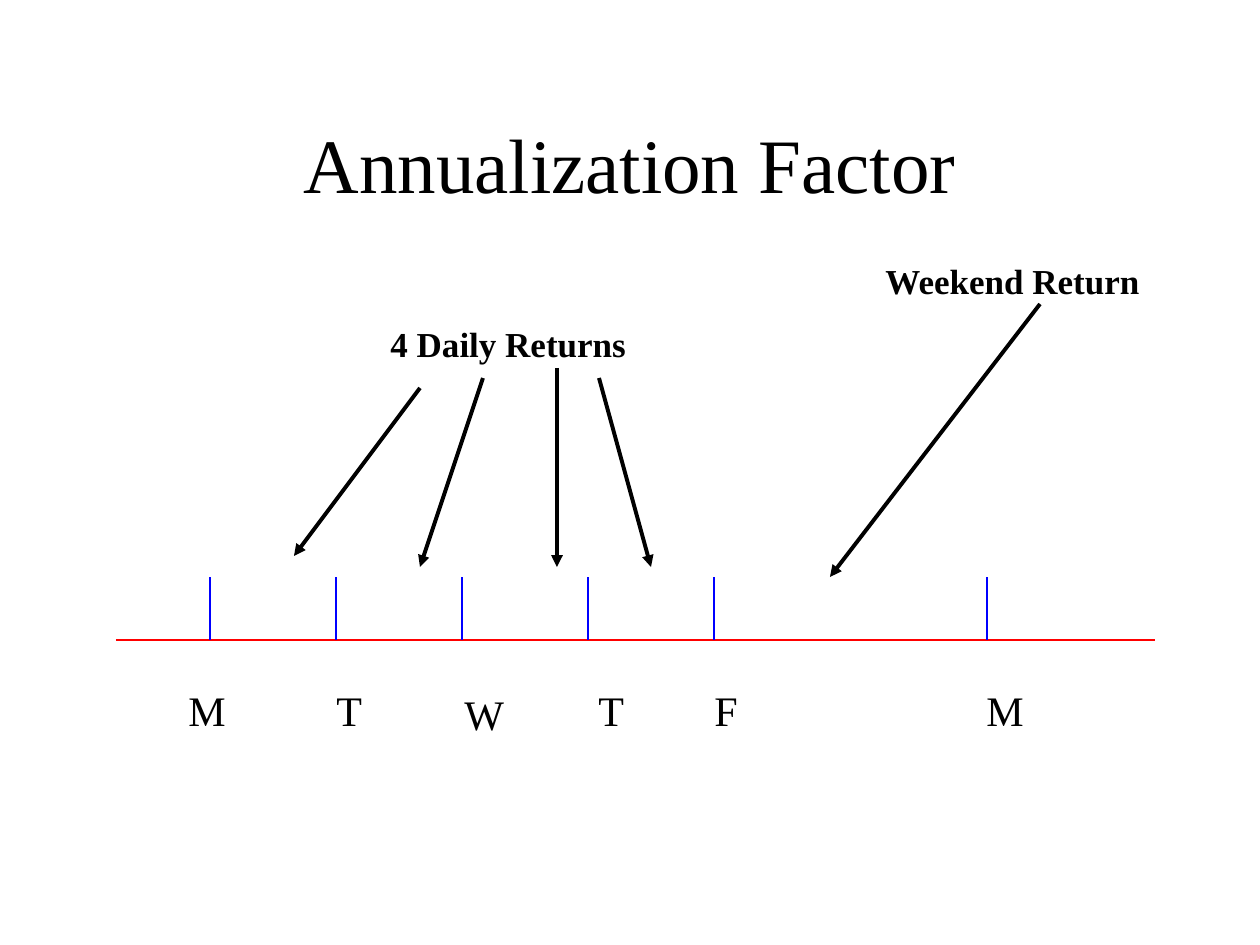
"""Build a slide that shows daily and weekend returns on a week's time line."""
import lxml.etree
import pptx
import pptx.dml.color
import pptx.enum.shapes
import pptx.enum.text
import pptx.oxml.ns
import pptx.util

PX = 914400 / 126
FONT = "Times New Roman"
HUES = {"ink": "000000", "axis": "FF0000", "tick": "0000FF"}


def emu(*sizes):
    """Turn px lengths into EMU."""
    return [pptx.util.Emu(round(size * PX)) for size in sizes]


def tint(name):
    """Give the named colour."""
    return pptx.dml.color.RGBColor.from_string(HUES[name])


def style(frame, text, size, bold=False):
    """Set the text of a frame and format its runs."""
    frame.text = text
    for run in frame.paragraphs[0].runs:
        run.font.name = FONT
        run.font.size = pptx.util.Pt(size)
        run.font.bold = bold
        run.font.color.rgb = tint("ink")


def label(slide, text, box, size, bold=False):
    """Add a text box that fits its single line."""
    frame = slide.shapes.add_textbox(*emu(*box)).text_frame
    frame.word_wrap = False
    frame.auto_size = pptx.enum.text.MSO_AUTO_SIZE.SHAPE_TO_FIT_TEXT
    style(frame, text, size, bold)


def line(slide, ends, hue, width, arrow=False):
    """Add a straight line, with an arrowhead at its end if asked."""
    kind = pptx.enum.shapes.MSO_CONNECTOR.STRAIGHT
    link = slide.shapes.add_connector(kind, *emu(*ends))
    link.line.color.rgb = tint(hue)
    link.line.width = pptx.util.Pt(width)
    props = link._element.spPr
    lxml.etree.SubElement(props, pptx.oxml.ns.qn("a:effectLst"))
    if arrow:
        stroke = props.find(pptx.oxml.ns.qn("a:ln"))
        head = lxml.etree.SubElement(stroke, pptx.oxml.ns.qn("a:tailEnd"))
        head.set("type", "triangle")


def title(slide, text, box):
    """Place and format the title."""
    shape = slide.shapes.title
    shape.left, shape.top, shape.width, shape.height = emu(*box)
    frame = shape.text_frame
    frame.auto_size = pptx.enum.text.MSO_AUTO_SIZE.NONE
    frame.vertical_anchor = pptx.enum.text.MSO_ANCHOR.MIDDLE
    style(frame, text, 44)
    frame.paragraphs[0].alignment = pptx.enum.text.PP_ALIGN.CENTER


def week(slide, days, box):
    """Draw the time line with a tick and a letter for each day."""
    left, top, width, height = box
    base = top + height
    line(slide, (left, base, left + width, base), "axis", 0.75)
    for name, tick, start, drop, wide in days:
        spot = left + tick
        line(slide, (spot, base, spot, top), "tick", 0.75)
        label(slide, name, (left + start, top + drop, wide, 63), 24)


def group(slide, text, rays, box):
    """Add a bold label with arrows that point to its returns."""
    left, top = box[:2]
    label(slide, text, box, 20, True)
    for x1, y1, x2, y2 in rays:
        ends = (left + x1, top + y1, left + x2, top + y2)
        line(slide, ends, "ink", 2.25, True)


def main():
    """Build and save the slide."""
    deck = pptx.Presentation()
    deck.slide_width, deck.slide_height = emu(1260, 945)
    slide = deck.slides.add_slide(deck.slide_layouts[5])
    title(slide, "Annualization Factor", (94, 84, 1072, 158))
    days = [
        ("M", 94, 60, 101, 62),
        ("T", 220, 208, 101, 50),
        ("W", 346, 336, 105, 64),
        ("T", 472, 470, 101, 50),
        ("F", 598, 586, 101, 48),
        ("M", 871, 858, 101, 62),
    ]
    week(slide, days, (116, 577, 1039, 63))
    daily = [
        (42, 72, -84, 240),
        (105, 62, 42, 251),
        (179, 52, 179, 251),
        (221, 62, 273, 251),
    ]
    group(slide, "4 Daily Returns", daily, (378, 316, 261, 55))
    rest = [(167, 51, -43, 324)]
    group(slide, "Weekend Return", rest, (873, 253, 281, 55))
    deck.save("out.pptx")


if __name__ == "__main__":
    main()
